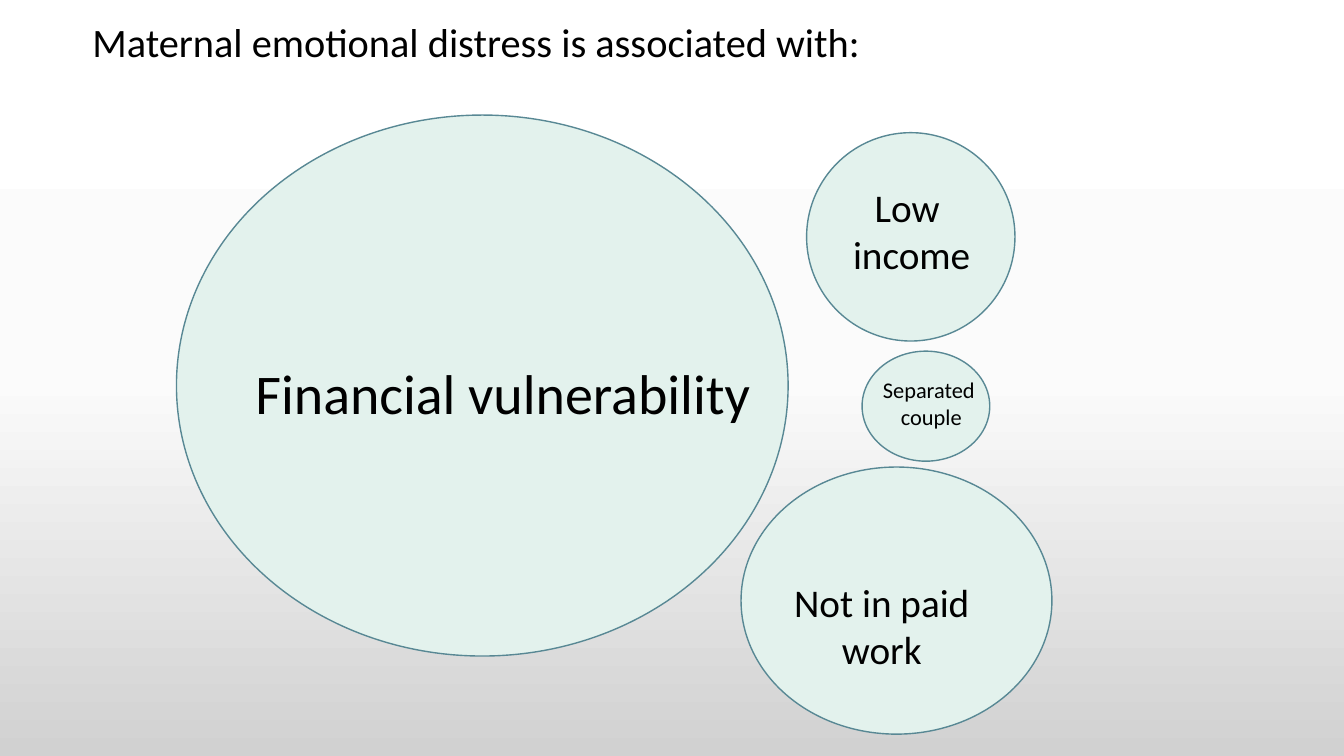
from copy import deepcopy
from dataclasses import dataclass

from pptx import Presentation
from pptx.dml.color import RGBColor
from pptx.enum.shapes import MSO_SHAPE as Shape
from pptx.enum.text import MSO_ANCHOR as Anchor, MSO_AUTO_SIZE as AutoSize, PP_ALIGN as Align
from pptx.oxml.ns import qn
from pptx.slide import Slide
from pptx.text.text import TextFrame
from pptx.util import Inches, Length, Pt


@dataclass(frozen=True)
class Theme:
    font: str = "Calibri"
    text: str = "000000"
    bubble: str = "E3F2ED"
    outline: str = "588894"
    background: tuple[tuple[float, str], ...] = ((0, "FFFFFF"), (0.5, "FBFBFB"), (1, "D1D1D1"))
    title_size: float = 28.8
    main_size: float = 40
    factor_size: float = 28
    small_size: float = 16


@dataclass(frozen=True)
class Box:
    """Left, top, width and height in grid columns and rows."""
    column: float
    row: float
    columns: float
    rows: float

    def lengths(self) -> tuple[Length, ...]:
        return tuple(Length(round(cells * CELL))
                     for cells in (self.column, self.row, self.columns, self.rows))


@dataclass(frozen=True)
class Factor:
    text: str
    size: float
    bubble: Box
    label: Box
    wrap: bool = False


THEME = Theme()
WIDTH, HEIGHT = Inches(13.33), Inches(7.5)
CELL = HEIGHT / 9  # square cells, 16 columns by 9 rows

TITLE = "Maternal emotional distress is associated with:"
TITLE_BOX = Box(0.98, 0.19, 13.8, 0.67)
FACTORS = (
    Factor("Financial vulnerability", THEME.main_size,
           Box(2.1, 1.37, 7.28, 6.44), Box(2.89, 4.21, 6.19, 0.92)),
    Factor("Not in paid\nwork", THEME.factor_size,
           Box(8.82, 5.56, 3.7, 3.18), Box(9.32, 6.83, 2.35, 1.25)),
    Factor("Low \nincome", THEME.factor_size,
           Box(9.6, 1.58, 2.48, 2.48), Box(10.02, 2.12, 1.66, 1.25)),
    Factor("Separated\n couple", THEME.small_size,
           Box(10.26, 4.18, 1.52, 1.31), Box(10.33, 4.42, 1.45, 0.77), wrap=True),
)


def rgb(value: str) -> RGBColor:
    return RGBColor.from_string(value)


def format_text(frame: TextFrame, size: float, align: Align) -> None:
    for paragraph in frame.paragraphs:
        paragraph.alignment = align
        for run in paragraph.runs:
            run.font.name = THEME.font
            run.font.size = Pt(size)
            run.font.color.rgb = rgb(THEME.text)


def paint_background(slide: Slide) -> None:
    fill = slide.background.fill
    fill.gradient()
    fill.gradient_angle = 270
    stop_list = slide.element.find(".//" + qn("a:gsLst"))
    stop_list.append(deepcopy(stop_list[-1]))  # third colour stop
    for stop, (position, color) in zip(fill.gradient_stops, THEME.background):
        stop.position = position
        stop.color.rgb = rgb(color)


def set_title(slide: Slide) -> None:
    title = slide.shapes.title
    title.left, title.top, title.width, title.height = TITLE_BOX.lengths()
    frame = title.text_frame
    frame.text = TITLE
    frame.auto_size = AutoSize.NONE
    frame.vertical_anchor = Anchor.MIDDLE
    frame.paragraphs[0].line_spacing = 0.9
    format_text(frame, THEME.title_size, Align.LEFT)


def add_bubble(slide: Slide, factor: Factor) -> None:
    bubble = slide.shapes.add_shape(Shape.OVAL, *factor.bubble.lengths())
    bubble.shadow.inherit = False
    bubble.fill.solid()
    bubble.fill.fore_color.rgb = rgb(THEME.bubble)
    bubble.line.color.rgb = rgb(THEME.outline)
    bubble.line.width = Pt(1)


def add_label(slide: Slide, factor: Factor) -> None:
    frame = slide.shapes.add_textbox(*factor.label.lengths()).text_frame
    frame.text = factor.text
    frame.word_wrap = factor.wrap
    frame.auto_size = AutoSize.SHAPE_TO_FIT_TEXT
    format_text(frame, factor.size, Align.CENTER)


def main() -> None:
    presentation = Presentation()
    presentation.slide_width, presentation.slide_height = WIDTH, HEIGHT
    slide = presentation.slides.add_slide(presentation.slide_layouts.get_by_name("Title Only"))

    # Background and title
    paint_background(slide)
    set_title(slide)

    # Bubbles first, so that every label lies on top
    for factor in FACTORS:
        add_bubble(slide, factor)
    for factor in FACTORS:
        add_label(slide, factor)

    presentation.save("out.pptx")


if __name__ == "__main__":
    main()
